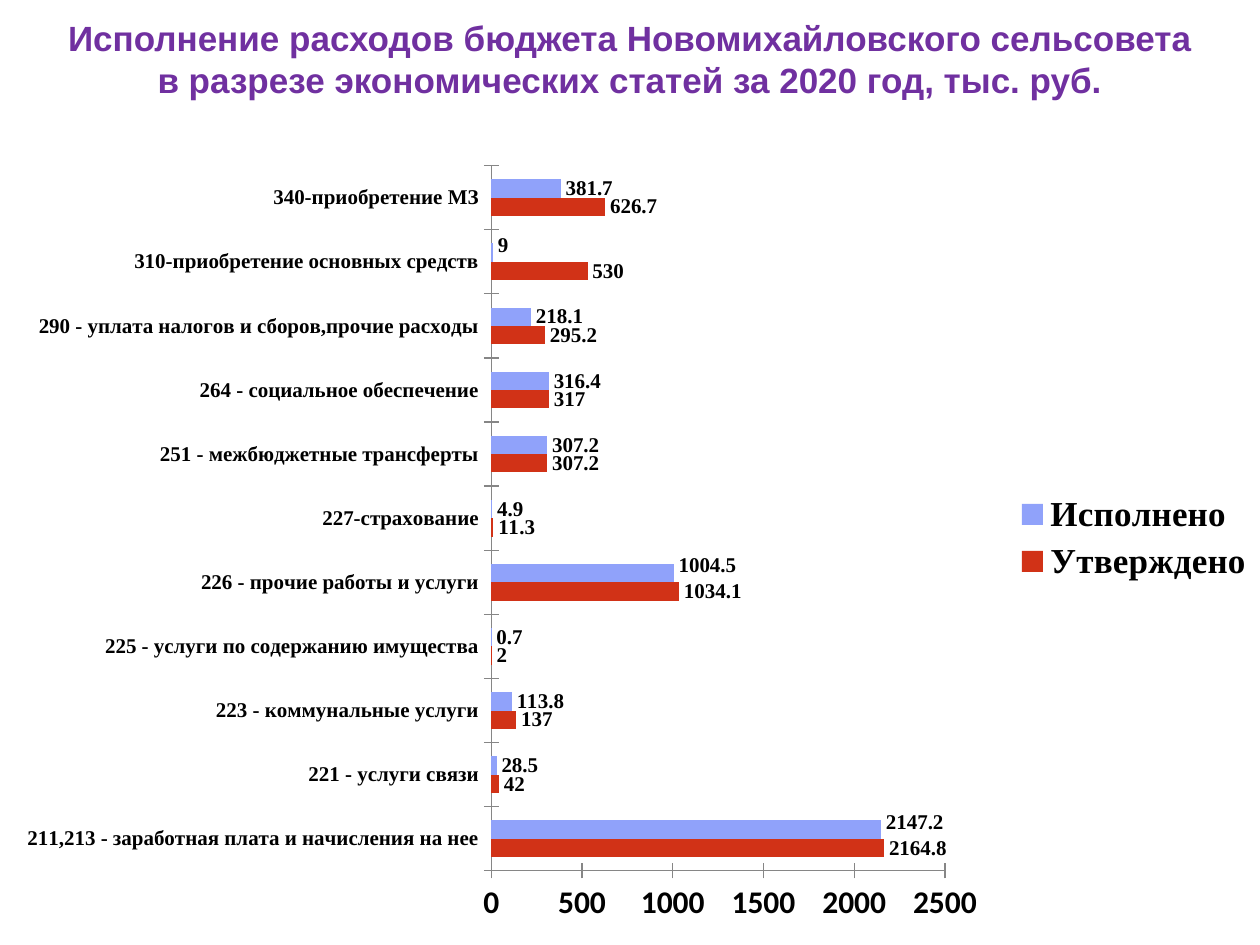
from copy import deepcopy

from lxml import etree
from pptx import Presentation
from pptx.chart.data import CategoryChartData
from pptx.dml.color import RGBColor
from pptx.enum.chart import (XL_CHART_TYPE, XL_LABEL_POSITION,
                             XL_LEGEND_POSITION, XL_TICK_MARK)
from pptx.enum.text import MSO_ANCHOR, MSO_AUTO_SIZE, PP_ALIGN
from pptx.oxml import parse_xml
from pptx.oxml.ns import nsdecls, qn
from pptx.util import Inches, Pt

BAR = XL_CHART_TYPE.BAR_CLUSTERED
OUTSIDE = XL_LABEL_POSITION.OUTSIDE_END
RIGHT = XL_LEGEND_POSITION.RIGHT
CROSS = XL_TICK_MARK.CROSS
TOP = MSO_ANCHOR.TOP
FIT_SHAPE = MSO_AUTO_SIZE.SHAPE_TO_FIT_TEXT
CENTER = PP_ALIGN.CENTER

COLORS = {"title": "7030A0", "text": "000000", "axis": "868686",
          "approved": "D13217", "executed": "90A2FA"}
SERIF = "Times New Roman"

HEADING = ["Исполнение расходов бюджета Новомихайловского сельсовета",
           "в разрезе экономических статей за 2020 год, тыс. руб."]
EXPENSES = [
    ("211,213 - заработная плата и начисления на нее", 2164.8, 2147.2),
    ("221 - услуги связи", 42, 28.5),
    ("223 - коммунальные услуги", 137, 113.8),
    ("225 - услуги по содержанию имущества", 2, 0.7),
    ("226 - прочие работы и услуги", 1034.1, 1004.5),
    ("227-страхование", 11.3, 4.9),
    ("251 - межбюджетные трансферты", 307.2, 307.2),
    ("264 - социальное обеспечение", 317, 316.4),
    ("290 - уплата налогов и сборов,прочие расходы", 295.2, 218.1),
    ("310-приобретение основных средств", 530, 9),
    ("340-приобретение МЗ", 626.7, 381.7),
]
RAISED_LABELS = {0: -0.01, 4: -0.01, 9: -0.01}


def rgb(name):
    return RGBColor.from_string(COLORS[name])


def set_font(font, size, face, bold=True, color="text"):
    font.size, font.name, font.bold = Pt(size), face, bold
    font.color.rgb = rgb(color)


def add_text(paragraph, text, outline=None, align=CENTER, **style):
    run = paragraph.add_run()
    run.text = text
    paragraph.alignment = align
    set_font(run.font, **style)
    if outline:
        run.font._element.insert(0, parse_xml(
            f'<a:ln {nsdecls("a")} w="{Pt(outline)}"><a:solidFill>'
            f'<a:srgbClr val="{COLORS[style["color"]]}"/></a:solidFill></a:ln>'))


def manual_layout(inner=False, **fractions):
    modes = {"xMode": "edge", "yMode": "edge"} if "w" in fractions else {}
    target = {"layoutTarget": "inner"} if inner else {}
    items = {**target, **modes, **fractions}
    body = "".join(f'<c:{tag} val="{value}"/>' for tag, value in items.items())
    return parse_xml(f'<c:layout {nsdecls("c")}><c:manualLayout>{body}'
                     '</c:manualLayout></c:layout>')


def place(parent, layout, after=None):
    for old in parent.findall(qn("c:layout")):
        parent.remove(old)
    if after is None:
        parent.insert(0, layout)
    else:
        parent.find(qn(after)).addnext(layout)


class BudgetSlide:
    def __init__(self, presentation):
        self.slide = presentation.slides.add_slide(presentation.slide_layouts[5])
        self.label_style = {"size": 12, "face": SERIF}

    def title(self, lines):
        heading = self.slide.shapes.title
        heading.left, heading.top = Inches(0), Inches(0.08)
        heading.width, heading.height = Inches(10), Inches(0.77)
        frame = heading.text_frame
        frame.word_wrap, frame.auto_size = True, FIT_SHAPE
        frame.vertical_anchor = TOP
        for index, line in enumerate(lines):
            paragraph = frame.add_paragraph() if index else frame.paragraphs[0]
            add_text(paragraph, line, outline=0.83, size=20, face="Arial",
                     color="title")

    def chart(self, rows):
        categories, approved, executed = zip(*rows)
        data = CategoryChartData()
        data.categories = categories
        data.add_series("Утверждено", approved)
        data.add_series("Исполнено", executed)
        chart = self.slide.shapes.add_chart(
            BAR, Inches(0), Inches(1.19), Inches(10), Inches(6.22), data).chart
        chart.has_title = False
        set_font(chart.font, 18, "Calibri", bold=False)
        plot = chart.plots[0]
        plot.gap_width, plot.overlap, plot.vary_by_categories = 150, 0, False
        place(chart._chartSpace.chart.plotArea,
              manual_layout(inner=True, x=0.39, y=0.02, w=0.36, h=0.9))
        for series, color in zip(plot.series, ("approved", "executed")):
            series.format.fill.solid()
            series.format.fill.fore_color.rgb = rgb(color)
            series.invert_if_negative = False
            self.labels(series)
        self.raise_labels(plot.series[1])
        self.axis(chart.category_axis, **self.label_style)
        self.axis(chart.value_axis, size=18, face="Calibri")
        chart.value_axis.minimum_scale = 0
        chart.value_axis.maximum_scale = 2500
        chart.value_axis.major_unit = 500
        self.legend(chart)

    def labels(self, series):
        labels = series.data_labels
        labels.show_value, labels.position = True, OUTSIDE
        set_font(labels.font, **self.label_style)

    def raise_labels(self, series):
        group = series.data_labels._element
        shared = [child for child in group if child.tag != qn("c:showLeaderLines")]
        for position, (index, shift) in enumerate(RAISED_LABELS.items()):
            label = etree.Element(qn("c:dLbl"))
            etree.SubElement(label, qn("c:idx")).set("val", str(index))
            label.append(manual_layout(x=0, y=shift))
            label.extend(deepcopy(child) for child in shared)
            group.insert(position, label)

    def axis(self, axis, **style):
        axis.has_major_gridlines = False
        axis.major_tick_mark = CROSS
        axis.format.line.color.rgb = rgb("axis")
        axis.format.line.width = Pt(0.75)
        set_font(axis.tick_labels.font, **style)

    def legend(self, chart):
        chart.has_legend = True
        legend = chart.legend
        legend.position, legend.include_in_layout = RIGHT, False
        set_font(legend.font, 20, SERIF)
        place(legend._element, manual_layout(x=0.8, y=0.43, w=0.2, h=0.13),
              after="c:legendPos")


def main():
    presentation = Presentation()
    presentation.slide_width, presentation.slide_height = Inches(10), Inches(7.5)
    budget = BudgetSlide(presentation)
    budget.title(HEADING)
    budget.chart(EXPENSES)
    presentation.save("out.pptx")


if __name__ == "__main__":
    main()
